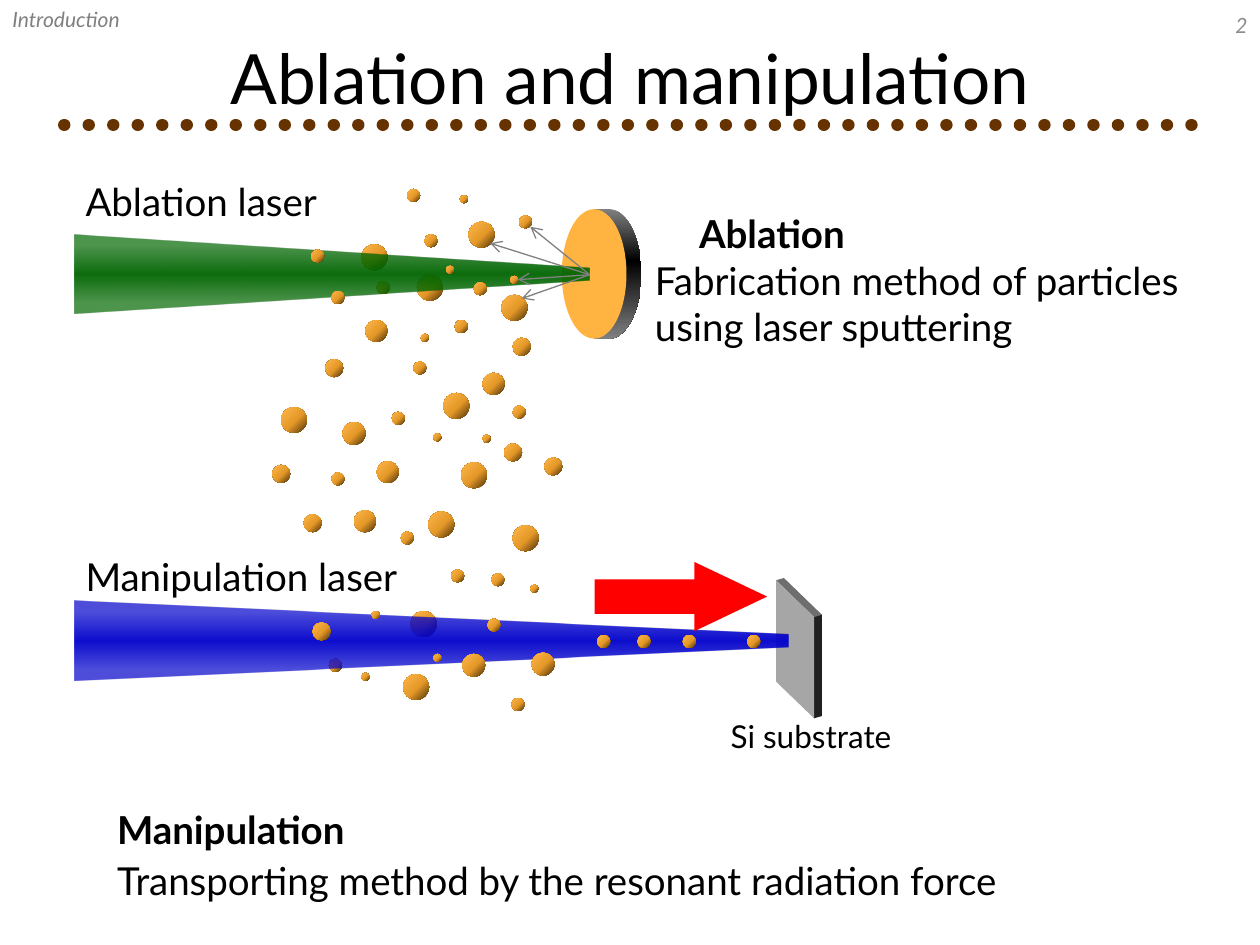
from dataclasses import dataclass
from math import cos, pi, sin

from pptx import Presentation
from pptx.dml.color import RGBColor
from pptx.enum.shapes import MSO_CONNECTOR, MSO_SHAPE
from pptx.enum.text import MSO_ANCHOR, PP_ALIGN
from pptx.oxml import parse_xml
from pptx.oxml.ns import nsdecls, qn
from pptx.util import Pt

FONT = "Lato"
COLORS = {
    "text": "000000", "header": "808080", "number": "8C8C8C", "rule": "663300",
    "disc": "FFB441", "rim": "808080", "rim_dark": "000000",
    "plate": "A6A6A6", "plate_top": "6E6E6E", "plate_side": "202020",
    "green": "006600", "blue": "0000CC", "force": "FF0000", "track": "808080",
    "shade": "4B3109", "orange": "E49828", "glow": "FFB74C",
}
PARTICLE_STOPS = [(0, "shade", 100), (45, "orange", 100), (100, "glow", 100)]

# Particle positions inside the cloud, grouped by diameter
PARTICLES_BEHIND = {
    7.4: [(33, 268.5), (60.3, 52.6)],
    14.8: [(79.7, 241.2), (51.6, 31.7), (83.3, 49)],
}
PARTICLES_IN_FRONT = {
    14.8: [(112.8, 18.7), (98.4, 116.6), (108.5, 156.2), (131.6, 60.5),
           (89.8, 184.3), (75.4, 277.2), (138, 192.2), (5.6, 124.6)],
    13: [(148.8, 265), (40.8, 133.2), (109.2, 265.7)],
    12.5: [(120.8, 105.1), (60.3, 155.5), (53.8, 74.9), (47.3, 183.6)],
    10.3: [(133, 145.4), (18.5, 185.8), (156, 153.4), (138, 85),
           (30.8, 97.2), (0.5, 157.7), (23.6, 247.7)],
    7.4: [(138, 123.8), (104.9, 74.9), (125.8, 219.6), (81.2, 98.6),
          (68.9, 127.4), (87.6, 25.9), (141.6, 15.1), (115.7, 53.3),
          (77.6, 0), (74, 195.8), (102.8, 217.4), (137.3, 290.9),
          (123.6, 245.5), (34.4, 162), (34.4, 58.3), (22.8, 34.6),
          (186.3, 254.9), (209.3, 254.9), (235.2, 254.9), (272, 254.9)],
    4.5: [(120.8, 140.4), (148.1, 226.1), (92.7, 139.7), (85.5, 82.8),
          (107.8, 3.6), (57.4, 241.2), (51.6, 276.5), (92.7, 265.7),
          (99.9, 43.9), (136.6, 49.7)],
}


@dataclass
class Box:
    left: float
    top: float
    width: float
    height: float

    def inner(self, left, top, width, height):
        return Box(self.left + left, self.top + top, width, height)

    def points(self):
        return [Pt(value) for value in (self.left, self.top, self.width, self.height)]


def rgb(name):
    return RGBColor.from_string(COLORS[name])


def add_text(page, box, lines, size=22, color="text", bold=False, italic=False,
             align=PP_ALIGN.LEFT, anchor=MSO_ANCHOR.TOP):
    frame = page.shapes.add_textbox(*box.points()).text_frame
    frame.word_wrap = True
    frame.vertical_anchor = anchor
    for index, line in enumerate(lines):
        para = frame.paragraphs[0] if index == 0 else frame.add_paragraph()
        para.alignment = align
        span = para.add_run()
        span.text = line
        span.font.name, span.font.size = FONT, Pt(size)
        span.font.bold, span.font.italic = bold, italic
        span.font.color.rgb = rgb(color)


def paint(shape, color=None, stops=(), angle=0):
    """Fill with one colour or with (position, colour, opacity) gradient stops."""
    shape.shadow.inherit = False
    shape.line.fill.background()
    if color:
        shape.fill.solid()
        shape.fill.fore_color.rgb = rgb(color)
        return
    shape.fill.background()
    marks = "".join(
        f'<a:gs pos="{position * 1000}"><a:srgbClr val="{COLORS[name]}">'
        f'<a:alpha val="{opacity * 1000}"/></a:srgbClr></a:gs>'
        for position, name, opacity in stops)
    gradient = parse_xml(
        f'<a:gradFill {nsdecls("a")} rotWithShape="1"><a:gsLst>{marks}</a:gsLst>'
        f'<a:lin ang="{angle * 60000}" scaled="0"/></a:gradFill>')
    properties = shape.element.spPr
    properties.replace(properties.find(qn("a:noFill")), gradient)


def add_preset(page, kind, box, **look):
    shape = page.shapes.add_shape(kind, *box.points())
    paint(shape, **look)
    return shape


def add_outline(page, box, corners, **look):
    places = [(Pt(box.left + x), Pt(box.top + y)) for x, y in corners]
    builder = page.shapes.build_freeform(*places[0])
    builder.add_line_segments(places[1:], close=True)
    paint(builder.convert_to_shape(), **look)


def add_line(page, start, end, color, width):
    line = page.shapes.add_connector(
        MSO_CONNECTOR.STRAIGHT, *[Pt(value) for value in (*start, *end)])
    line.line.color.rgb = rgb(color)
    line.line.width = Pt(width)
    line.element.spPr.append(parse_xml(f'<a:effectLst {nsdecls("a")}/>'))
    return line.element.spPr.find(qn("a:ln"))


def draw_header(page, box):
    # Round-dotted rule under the title
    rule_y = box.top + 71.3
    stroke = add_line(page, (box.left + 36.7, rule_y),
                      (box.left + box.width - 36.7, rule_y), "rule", 7)
    stroke.set("cap", "rnd")
    stroke.append(parse_xml(f'<a:prstDash {nsdecls("a")} val="sysDot"/>'))
    add_text(page, box.inner(36, 16, box.width - 72, 56), ["Ablation and manipulation"],
             size=39.6, align=PP_ALIGN.CENTER, anchor=MSO_ANCHOR.MIDDLE)
    add_text(page, box.inner(box.width - 168, 0, 168, 29), ["2"], size=12, color="number",
             italic=True, align=PP_ALIGN.RIGHT, anchor=MSO_ANCHOR.MIDDLE)
    add_text(page, box.inner(0, 0, 170, 32), ["Introduction"], size=12,
             color="header", italic=True)


def draw_disc(page, box):
    depth = 8.5
    face_width = box.width - depth
    radius_x, radius_y = face_width / 2, box.height / 2
    # Rim: right half of the ellipse, moved back by the depth
    angles = [pi * step / 40 - pi / 2 for step in range(41)]
    rim = [(radius_x + depth + radius_x * cos(angle), radius_y + radius_y * sin(angle))
           for angle in angles]
    add_outline(page, box, [(radius_x, 0), *rim, (radius_x, box.height)], angle=90,
                stops=[(0, "rim", 100), (40, "rim_dark", 100), (100, "rim", 100)])
    add_preset(page, MSO_SHAPE.OVAL, box.inner(0, 0, face_width, box.height), color="disc")


def draw_substrate(page, box):
    depth, lift, slant = 4.5, 1.3, 21
    front = box.width - depth
    bottom = box.height
    add_outline(page, box, [(0, lift), (depth, 0), (box.width, slant),
                            (front, slant + lift)], color="plate_top")
    add_outline(page, box, [(front, slant + lift), (box.width, slant),
                            (box.width, bottom - lift), (front, bottom)], color="plate_side")
    add_outline(page, box, [(0, lift), (front, slant + lift), (front, bottom),
                            (0, bottom - slant)], color="plate")


def draw_cloud(page, box, particles):
    for size, places in particles.items():
        for x, y in places:
            add_preset(page, MSO_SHAPE.OVAL, box.inner(x, y, size, size),
                       stops=PARTICLE_STOPS, angle=225)


def draw_laser(page, box, label, color, label_rise):
    # The trapezoid stands upright about the same centre, then turns to point right
    upright = box.inner((box.width - box.height) / 2, (box.height - box.width) / 2,
                        box.height, box.width)
    beam = add_preset(page, MSO_SHAPE.TRAPEZOID, upright,
                      stops=[(15, color, 70), (50, color, 95), (85, color, 70)])
    beam.adjustments[0] = 0.42
    beam.rotation = 90
    add_text(page, box.inner(-0.5, -label_rise, 215, 34), [label])


def draw_ejection(page, box):
    # Tracks of particles leaving the laser spot
    spot = (box.left + box.width, box.top + 33)
    for x, y in [(23, 5.6), (18, 46.6), (15.8, 35.8), (0, 15)]:
        stroke = add_line(page, spot, (box.left + x, box.top + y), "track", 0.75)
        stroke.append(parse_xml(f'<a:tailEnd {nsdecls("a")} type="arrow"/>'))


def draw_force(page, box):
    arrow = add_preset(page, MSO_SHAPE.RIGHT_ARROW, box, color="force")
    arrow.adjustments[0], arrow.adjustments[1] = 0.5, 1.05


def draw_note(page, box, heading, lines, indent, drop):
    add_text(page, box.inner(indent, 0, 180, 34), [heading], bold=True)
    add_text(page, box.inner(0, drop, box.width, box.height - drop), lines)


def main():
    deck = Presentation()
    deck.slide_width, deck.slide_height = Pt(720), Pt(540)
    page = deck.slides.add_slide(deck.slide_layouts[6])
    cloud = Box(155, 108, 280, 300)

    draw_header(page, Box(0, 0, 720, 75))
    draw_disc(page, Box(321, 119.5, 45.5, 74))
    draw_substrate(page, Box(443.5, 330.3, 26.2, 80.2))
    draw_cloud(page, cloud, PARTICLES_BEHIND)
    draw_laser(page, Box(42.3, 133.9, 294.7, 45.4), "Ablation laser", "green", 36)
    draw_laser(page, Box(42.3, 343.4, 408, 45.4), "Manipulation laser", "blue", 31)
    draw_cloud(page, cloud, PARTICLES_IN_FRONT)
    draw_note(page, Box(367.2, 116.6, 352.8, 87.2), "Ablation",
              ["Fabrication method of particles", "using laser sputtering"], 25.2, 26.7)
    draw_note(page, Box(59.8, 457.2, 578, 62.8), "Manipulation",
              ["Transporting method by the resonant radiation force"], 0, 28.8)
    add_text(page, Box(410.4, 406, 120, 29), ["Si substrate"], size=18)
    draw_force(page, Box(339.8, 321.1, 98.6, 39.6))
    draw_ejection(page, Box(280.1, 124, 56.9, 50))
    deck.save("out.pptx")


if __name__ == "__main__":
    main()
